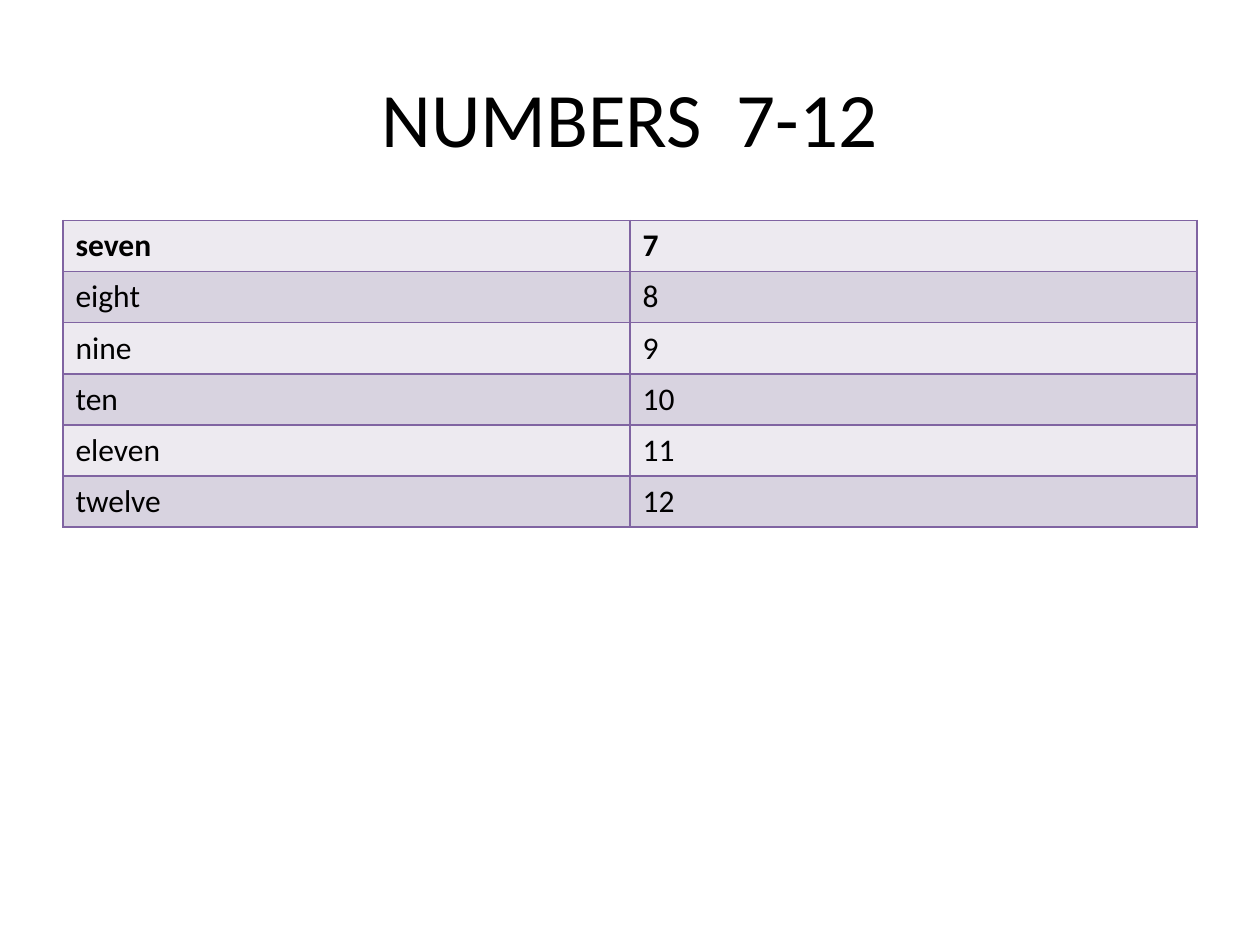
import pptx
import pptx.dml.color
import pptx.enum.text
import pptx.oxml
import pptx.oxml.ns
import pptx.util

COLORS = {"text": "000000", "border": "8064A2", "light": "EDEAF0", "dark": "D8D3E0"}
NUMBERS = ["seven", "eight", "nine", "ten", "eleven", "twelve"]


def rgb(name):
    return pptx.dml.color.RGBColor.from_string(COLORS[name])


class Deck:
    """Holds the style and the current slide; lengths are shares of its size."""

    def __init__(self, prs, font="Calibri", border_pt=1):
        self.prs, self.font, self.border_pt = prs, font, border_pt
        self.s = prs.slides.add_slide(prs.slide_layouts[5])

    def box(self, x, y, w, h):
        width, height = self.prs.slide_width, self.prs.slide_height
        return [round(v) for v in (x * width, y * height, w * width, h * height)]

    def add_text(self, tf, text, size, **extra):
        p = tf.paragraphs[0]
        r = p.add_run()
        r.text = text
        fmt = {"name": self.font, "size": pptx.util.Pt(size), **extra}
        for key, value in fmt.items():
            setattr(r.font, key, value)
        r.font.color.rgb = rgb("text")
        return p

    def title(self, text, x, y, w, h):
        sp = self.s.shapes.title
        sp.left, sp.top, sp.width, sp.height = self.box(x, y, w, h)
        tf = sp.text_frame
        tf.vertical_anchor = pptx.enum.text.MSO_ANCHOR.MIDDLE
        self.add_text(tf, text, 44).alignment = pptx.enum.text.PP_ALIGN.CENTER

    def border(self, cell):
        for side in "LRTB":
            cell._tc.get_or_add_tcPr().append(pptx.oxml.parse_xml(
                f'<a:ln{side} {pptx.oxml.ns.nsdecls("a")} w="{pptx.util.Pt(self.border_pt)}">'
                f'<a:solidFill><a:srgbClr val="{COLORS["border"]}"/></a:solidFill>'
                f'</a:ln{side}>'))

    def table(self, rows, x, y, w, h):
        box = self.box(x, y, w, h)
        table = self.s.shapes.add_table(len(rows), len(rows[0]), *box).table
        for i, row in enumerate(rows):
            for j, text in enumerate(row):
                cell = table.cell(i, j)
                self.add_text(cell.text_frame, text, 18, bold=i == 0)
                self.border(cell)
                cell.fill.solid()
                cell.fill.fore_color.rgb = rgb("dark" if i % 2 else "light")


def main():
    prs = pptx.Presentation()
    prs.slide_width, prs.slide_height = pptx.util.Inches(10), pptx.util.Inches(7.5)
    deck = Deck(prs)
    deck.title("NUMBERS  7-12", 0.05, 0.04, 0.9, 1 / 6)
    rows = [(word, str(n)) for n, word in enumerate(NUMBERS, 7)]
    deck.table(rows, 0.05, 7 / 30, 0.9, 2.43 / 7.5)
    prs.save("out.pptx")


if __name__ == "__main__":
    main()
